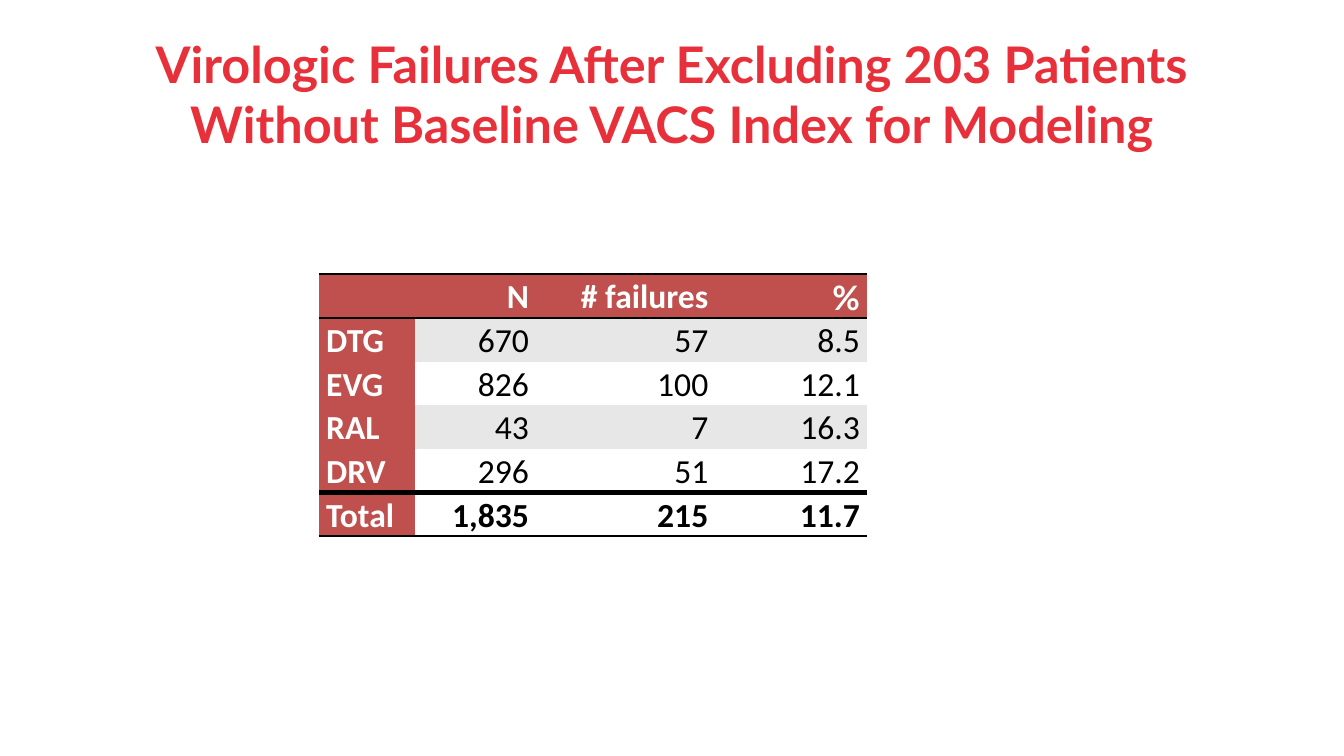
from lxml import etree
from pptx import Presentation
from pptx.dml.color import RGBColor
from pptx.enum.text import MSO_ANCHOR, PP_ALIGN
from pptx.oxml.ns import qn
from pptx.util import Cm, Pt

MIDDLE, TOP = MSO_ANCHOR.MIDDLE, MSO_ANCHOR.TOP
LEFT, CENTER, RIGHT = PP_ALIGN.LEFT, PP_ALIGN.CENTER, PP_ALIGN.RIGHT

COLORS = {
    "title": "E8303B",
    "header": "C0504D",
    "band": "E7E7E7",
    "white": "FFFFFF",
    "black": "000000",
}
NO_GRID_STYLE = "{2D5ABB26-0587-4C30-8999-92F81FD0307C}"
TITLE = ("Virologic Failures After Excluding 203 Patients "
         "Without Baseline VACS Index for Modeling")
FAILURES = [
    ["", "N", "# failures", "%"],
    ["DTG", "670", "57", "8.5"],
    ["EVG", "826", "100", "12.1"],
    ["RAL", "43", "7", "16.3"],
    ["DRV", "296", "51", "17.2"],
    ["Total", "1,835", "215", "11.7"],
]
COLUMN_WIDTHS = [2.44, 3.05, 4.52, 3.82]
ROW_HEIGHT = 1.1
TOTAL_ROW = len(FAILURES) - 1
# Row index: (top, bottom) line widths in points
RULES = {0: (2, 2), TOTAL_ROW: (4, 2)}


def add_run(paragraph, text, size, color, bold, font="Calibri"):
    run = paragraph.add_run()
    run.text = text
    run.font.name = font
    run.font.size = Pt(size)
    run.font.bold = bold
    run.font.color.rgb = RGBColor.from_string(COLORS[color])


def add_title(slide):
    title = slide.shapes.add_textbox(Cm(2.08), Cm(0.76), Cm(29.7), Cm(3.18))
    frame = title.text_frame
    frame.word_wrap = True
    frame.vertical_anchor = MIDDLE
    paragraph = frame.paragraphs[0]
    paragraph.alignment = CENTER
    add_run(paragraph, TITLE, 36, "title", True, "Lato")


def rule_cell(cell, top, bottom):
    """Draw black lines above and below the cell, widths in points."""
    properties = cell._tc.get_or_add_tcPr()
    for position, (tag, width) in enumerate((("a:lnT", top), ("a:lnB", bottom))):
        line = etree.Element(qn(tag), w=str(Pt(width)))
        fill = etree.SubElement(line, qn("a:solidFill"))
        etree.SubElement(fill, qn("a:srgbClr"), val=COLORS["black"])
        properties.insert(position, line)


def fill_cell(cell, text, row, column):
    is_header = row == 0
    is_label = is_header or column == 0
    if is_label:
        background = "header"
    else:
        background = "band" if row in (1, 3) else "white"
    cell.fill.solid()
    cell.fill.fore_color.rgb = RGBColor.from_string(COLORS[background])
    cell.margin_left = cell.margin_right = Cm(0.19)
    cell.margin_top = cell.margin_bottom = Cm(0)
    cell.vertical_anchor = MIDDLE if is_header else TOP
    if row in RULES:
        rule_cell(cell, *RULES[row])
    if text:
        paragraph = cell.text_frame.paragraphs[0]
        paragraph.alignment = LEFT if column == 0 else RIGHT
        paragraph.line_spacing = 1.07
        add_run(paragraph, text, 24, "white" if is_label else "black",
                is_label or row == TOTAL_ROW, "Lato" if text == "%" else "Calibri")


def add_failure_table(slide):
    frame = slide.shapes.add_table(
        len(FAILURES), len(COLUMN_WIDTHS), Cm(8.03), Cm(6.91),
        Cm(sum(COLUMN_WIDTHS)), Cm(ROW_HEIGHT * len(FAILURES)))
    table = frame.table
    table.horz_banding = False
    table._tbl.tblPr.find(qn("a:tableStyleId")).text = NO_GRID_STYLE
    for column, width in zip(table.columns, COLUMN_WIDTHS):
        column.width = Cm(width)
    for row, values in enumerate(FAILURES):
        table.rows[row].height = Cm(ROW_HEIGHT)
        for column, text in enumerate(values):
            fill_cell(table.cell(row, column), text, row, column)


def main():
    presentation = Presentation()
    presentation.slide_width = Cm(33.87)
    presentation.slide_height = Cm(19.05)
    slide = presentation.slides.add_slide(presentation.slide_layouts[6])
    add_title(slide)
    add_failure_table(slide)
    presentation.save("out.pptx")


if __name__ == "__main__":
    main()
